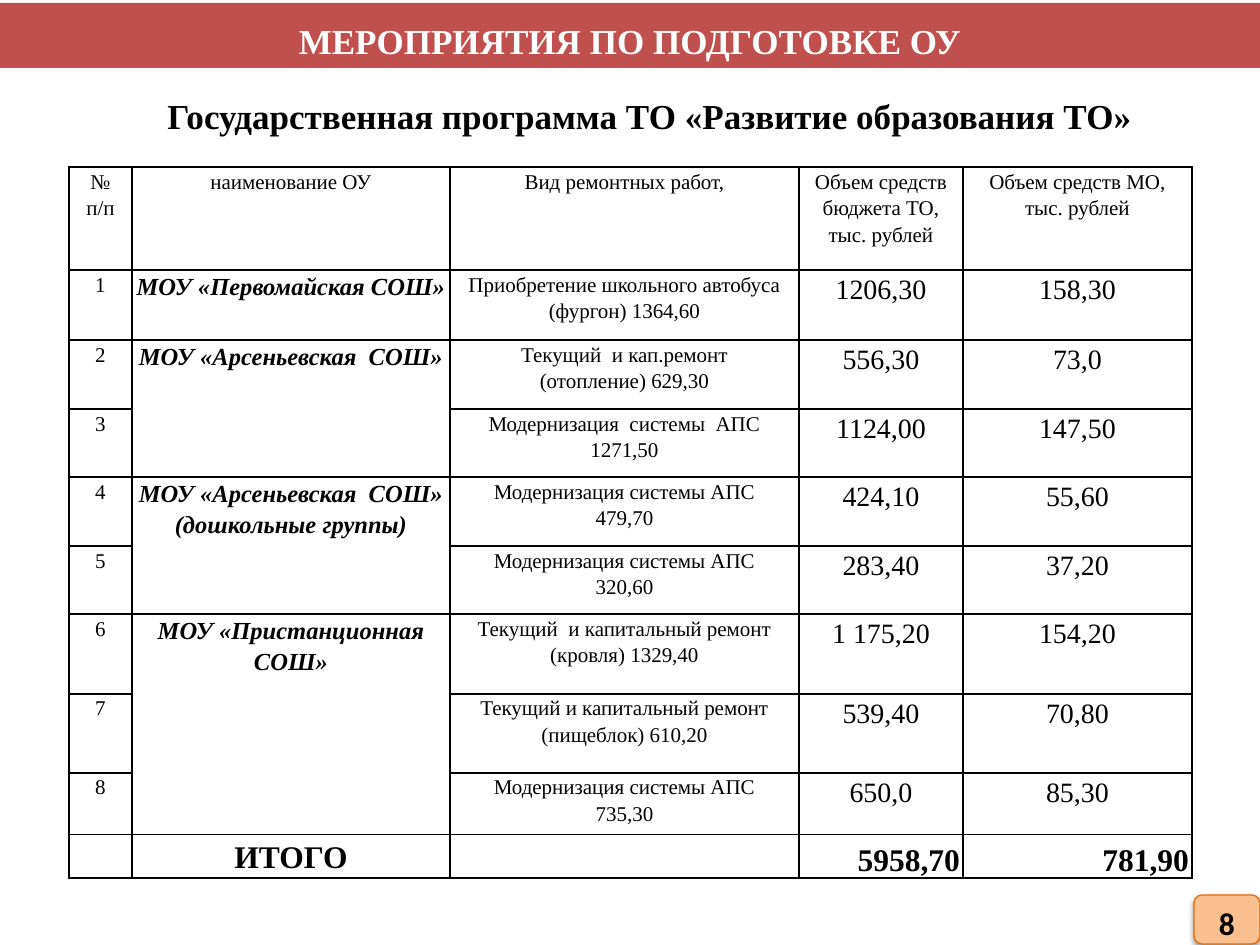
from lxml import etree
from pptx import Presentation
from pptx.dml.color import RGBColor
from pptx.enum.shapes import MSO_SHAPE
from pptx.enum.text import MSO_ANCHOR, PP_ALIGN
from pptx.oxml.ns import qn
from pptx.util import Emu, Pt

RECTANGLE = MSO_SHAPE.RECTANGLE
ROUNDED_RECTANGLE = MSO_SHAPE.ROUNDED_RECTANGLE
CENTER = PP_ALIGN.CENTER
RIGHT = PP_ALIGN.RIGHT
TOP = MSO_ANCHOR.TOP
MIDDLE = MSO_ANCHOR.MIDDLE
BOTTOM = MSO_ANCHOR.BOTTOM

BLACK = RGBColor(0x00, 0x00, 0x00)
WHITE = RGBColor(0xFF, 0xFF, 0xFF)
RED = RGBColor(0xC0, 0x50, 0x4D)
PEACH = RGBColor(0xFA, 0xC0, 0x90)
ORANGE = RGBColor(0xE4, 0x6C, 0x0A)

SERIF = "Times New Roman"
SANS = "Calibri"

SLIDE_SIZE = (1260, 945)
COLUMN_WIDTHS = [63, 318, 349, 164, 229]
ROW_HEIGHTS = [103, 70, 69, 68, 69, 68, 80, 79, 62, 43]
COLUMN_SIZES = [12, 14, 12, 16, 16]
NAME_COLUMN = 1
FIRST_SUM_COLUMN = 3
NAME_SPANS = [(2, 3), (4, 5), (6, 8)]

ROWS = [
    ["№\nп/п", "наименование ОУ", "Вид ремонтных работ,",
     "Объем средств бюджета ТО,\nтыс. рублей", "Объем средств МО,\nтыс. рублей"],
    ["1", "МОУ «Первомайская СОШ»",
     "Приобретение школьного автобуса (фургон) 1364,60", "1206,30", "158,30"],
    ["2", "МОУ «Арсеньевская  СОШ»",
     "Текущий  и кап.ремонт\n(отопление) 629,30", "556,30", "73,0"],
    ["3", "", "Модернизация  системы  АПС\n1271,50", "1124,00", "147,50"],
    ["4", "МОУ «Арсеньевская  СОШ» (дошкольные группы)",
     "Модернизация системы АПС\n479,70", "424,10", "55,60"],
    ["5", "", "Модернизация системы АПС\n320,60", "283,40", "37,20"],
    ["6", "МОУ «Пристанционная СОШ»",
     "Текущий  и капитальный ремонт (кровля) 1329,40", "1 175,20", "154,20"],
    ["7", "", "Текущий и капитальный ремонт (пищеблок) 610,20", "539,40", "70,80"],
    ["8", "", "Модернизация системы АПС\n735,30", "650,0", "85,30"],
    ["", "ИТОГО", "", "5958,70", "781,90"],
]


def px(length):
    return Emu(round(length * 9144000 / SLIDE_SIZE[0]))


def write(text_frame, text, size, color=BLACK, font=SERIF, bold=True,
          italic=False, align=CENTER, spacing=None):
    text_frame.text = text
    text_frame.word_wrap = True
    for paragraph in text_frame.paragraphs:
        paragraph.alignment = align
        paragraph.line_spacing = spacing
        for run in paragraph.runs:
            run.font.name = font
            run.font.size = Pt(size)
            run.font.bold = bold
            run.font.italic = italic
            run.font.color.rgb = color


def add_banner(slide, box, text):
    shape = slide.shapes.add_shape(RECTANGLE, *map(px, box))
    shape.shadow.inherit = False
    shape.fill.solid()
    shape.fill.fore_color.rgb = RED
    shape.line.fill.background()
    text_frame = shape.text_frame
    write(text_frame, text, 20, WHITE)
    text_frame.vertical_anchor = MIDDLE
    text_frame.margin_top = px(17)
    text_frame.margin_bottom = px(6)


def add_subtitle(slide, box, text):
    shape = slide.shapes.add_textbox(*map(px, box))
    write(shape.text_frame, text, 20)


def add_page_badge(slide, box, text):
    shape = slide.shapes.add_shape(ROUNDED_RECTANGLE, *map(px, box))
    shape.shadow.inherit = False
    shape.fill.solid()
    shape.fill.fore_color.rgb = PEACH
    shape.line.color.rgb = ORANGE
    shape.line.width = Pt(0.75)
    effects = shape._element.spPr.find(qn("a:effectLst"))
    shadow = etree.SubElement(effects, qn("a:outerShdw"), blurRad=str(Pt(3.1)),
                              dist=str(Pt(1.6)), dir="5400000", rotWithShape="0")
    color = etree.SubElement(shadow, qn("a:srgbClr"), val=str(BLACK))
    etree.SubElement(color, qn("a:alpha"), val="38000")
    write(shape.text_frame, text, 18, font=SANS)
    shape.text_frame.vertical_anchor = TOP


def add_borders(cell):
    properties = cell._tc.get_or_add_tcPr()
    for position, side in enumerate(("a:lnL", "a:lnR", "a:lnT", "a:lnB")):
        line = etree.Element(qn(side), w=str(Pt(1)))
        fill = etree.SubElement(line, qn("a:solidFill"))
        etree.SubElement(fill, qn("a:srgbClr"), val=str(BLACK))
        properties.insert(position, line)


def fill_cell(cell, text, row, column):
    is_header = row == 0
    is_total = row == len(ROWS) - 1
    is_name = column == NAME_COLUMN and not is_header and not is_total
    is_total_sum = is_total and column >= FIRST_SUM_COLUMN
    size = 12 if is_header else 18 if is_total else COLUMN_SIZES[column]
    cell.margin_left = cell.margin_right = px(3)
    cell.margin_top = cell.margin_bottom = 0
    cell.vertical_anchor = BOTTOM if is_total_sum else TOP
    cell.fill.background()
    add_borders(cell)
    write(cell.text_frame, text, size, bold=is_name or is_total, italic=is_name,
          align=RIGHT if is_total_sum else CENTER, spacing=1.15)


def add_works_table(slide, left, top):
    box = (left, top, sum(COLUMN_WIDTHS), sum(ROW_HEIGHTS))
    table = slide.shapes.add_table(len(ROWS), len(COLUMN_WIDTHS), *map(px, box)).table
    table.first_row = False
    table.horz_banding = False
    for column, width in zip(table.columns, COLUMN_WIDTHS):
        column.width = px(width)
    for row, height in zip(table.rows, ROW_HEIGHTS):
        row.height = px(height)
    for row, texts in enumerate(ROWS):
        for column, text in enumerate(texts):
            fill_cell(table.cell(row, column), text, row, column)
    for first, last in NAME_SPANS:
        table.cell(first, NAME_COLUMN).merge(table.cell(last, NAME_COLUMN))


def main():
    presentation = Presentation()
    presentation.slide_width, presentation.slide_height = map(px, SLIDE_SIZE)
    slide = presentation.slides.add_slide(presentation.slide_layouts[6])
    add_banner(slide, (0, 3, 1260, 65), "МЕРОПРИЯТИЯ ПО ПОДГОТОВКЕ ОУ")
    add_page_badge(slide, (1194, 895, 66, 49), "8")
    add_subtitle(slide, (98, 88, 1103, 55),
                 "Государственная программа ТО «Развитие образования ТО»")
    add_works_table(slide, 69, 167)
    presentation.save("out.pptx")


if __name__ == "__main__":
    main()
